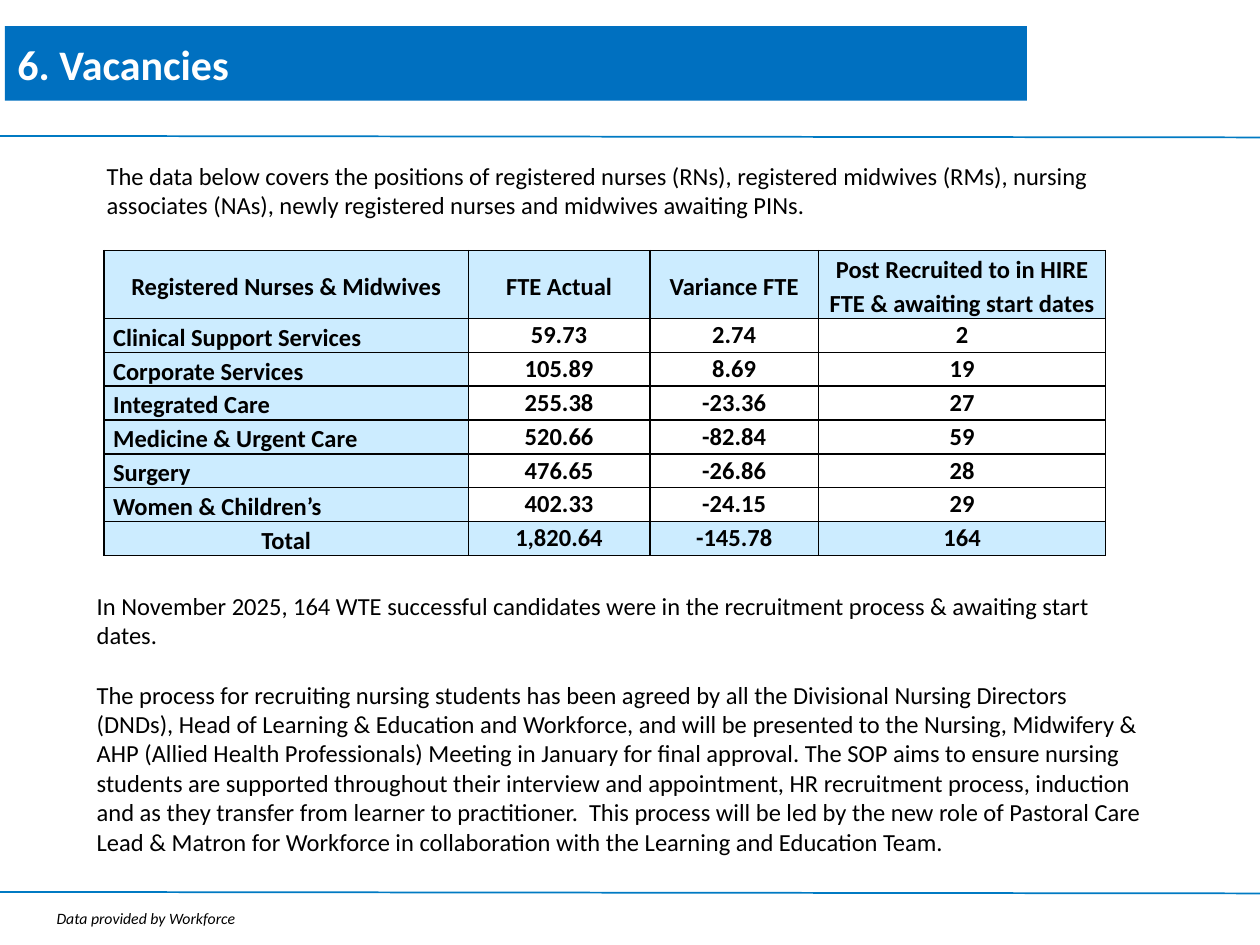
from typing import NamedTuple

from lxml import etree
from pptx import Presentation
from pptx.dml.color import RGBColor
from pptx.enum.shapes import MSO_CONNECTOR as Link, MSO_SHAPE as Form
from pptx.enum.text import MSO_ANCHOR as Anchor, PP_ALIGN as Align
from pptx.oxml.ns import qn
from pptx.util import Cm, Pt

BLACK, WHITE = "000000", "FFFFFF"
RULE, BANNER, PALE = "007AC3", "0070C0", "CCECFF"


class Note(NamedTuple):
    """A text box: place in cm, then its paragraphs and format."""
    left: float
    top: float
    width: float
    height: float
    lines: list
    size: int = 14
    italic: bool = False


class Row(NamedTuple):
    name: str
    actual: str
    variance: str
    posts: str


NOTES = [
    Note(1.9, 3.12, 22.25, 3.2, [
        "The data below covers the positions of registered nurses (RNs), "
        "registered midwives (RMs), nursing associates (NAs), newly registered "
        "nurses and midwives awaiting PINs."]),
    Note(0.89, 18.19, 6, 0.64, ["Data provided by Workforce"], 9, True),
    Note(1.7, 11.79, 21.59, 6.25, [
        "In November 2025, 164 WTE successful candidates were in the "
        "recruitment process & awaiting start dates.",
        "The process for recruiting nursing students has been agreed by all "
        "the Divisional Nursing Directors (DNDs), Head of Learning & Education "
        "and Workforce, and will be presented to the Nursing, Midwifery & AHP "
        "(Allied Health Professionals) Meeting in January for final approval. "
        "The SOP aims to ensure nursing students are supported throughout "
        "their interview and appointment, HR recruitment process, induction "
        "and as they transfer from learner to practitioner.  This process will "
        "be led by the new role of Pastoral Care Lead & Matron for Workforce "
        "in collaboration with the Learning and Education Team."]),
]

ROWS = [
    Row("Registered Nurses & Midwives", "FTE Actual", "Variance FTE",
        "Post Recruited to in HIRE FTE & awaiting start dates"),
    Row("Clinical Support Services", "59.73", "2.74", "2"),
    Row("Corporate Services", "105.89", "8.69", "19"),
    Row("Integrated Care", "255.38", "-23.36", "27"),
    Row("Medicine & Urgent Care", "520.66", "-82.84", "59"),
    Row("Surgery", "476.65", "-26.86", "28"),
    Row("Women & Children’s", "402.33", "-24.15", "29"),
    Row("Total", "1,820.64", "-145.78", "164"),
]
WIDTHS = [7.34, 3.66, 3.4, 5.79]
HEAD, BODY = 1.37, 0.66


def color(code: str) -> RGBColor:
    return RGBColor.from_string(code)


def write(frame, lines, *, size=14, bold=False, italic=False, ink=BLACK,
          align=Align.LEFT, gap=0, after=0, pitch=None) -> None:
    """Fill a text frame; gap is the space before each later paragraph."""
    frame.word_wrap = True
    for i, line in enumerate(lines):
        par = frame.add_paragraph() if i else frame.paragraphs[0]
        par.alignment = align
        if i:
            par.space_before = Pt(gap)
        par.space_after = Pt(after)
        if pitch:
            par.line_spacing = pitch
        run = par.add_run()
        run.text = line
        font = run.font
        font.name, font.size = "Calibri", Pt(size)
        font.bold, font.italic = bold, italic
        font.color.rgb = color(ink)


def add_rule(slide, top: float) -> None:
    line = slide.shapes.add_connector(
        Link.STRAIGHT, 0, Cm(top), Cm(25.4), Cm(top + 0.03))
    line.line.color.rgb = color(RULE)
    line.line.width = Pt(1)
    etree.SubElement(line._element.spPr, qn("a:effectLst"))


def add_title(slide, text: str) -> None:
    bar = slide.shapes.add_shape(
        Form.RECTANGLE, Cm(0.1), Cm(0.53), Cm(20.6), Cm(1.5))
    bar.shadow.inherit = False
    bar.fill.solid()
    bar.fill.fore_color.rgb = color(BANNER)
    bar.line.fill.background()
    bar.text_frame.vertical_anchor = Anchor.MIDDLE
    write(bar.text_frame, [text], size=24, bold=True, ink=WHITE)


def add_note(slide, note: Note) -> None:
    box = slide.shapes.add_textbox(*(Cm(n) for n in note[:4]))
    write(box.text_frame, note.lines, size=note.size, italic=note.italic, gap=17)


def add_edges(cell) -> None:
    """Draw a black 1 pt border; sides must come before the cell's fill."""
    props = cell._tc.get_or_add_tcPr()
    for i, side in enumerate(("a:lnL", "a:lnR", "a:lnT", "a:lnB")):
        edge = etree.Element(qn(side), w=str(Pt(1)))
        fill = etree.SubElement(edge, qn("a:solidFill"))
        etree.SubElement(fill, qn("a:srgbClr"), val=BLACK)
        props.insert(i, edge)


def add_grid(slide, rows: list[Row]) -> None:
    last = len(rows) - 1
    grid = slide.shapes.add_table(
        len(rows), len(WIDTHS), Cm(2.1), Cm(5.05),
        Cm(sum(WIDTHS)), Cm(HEAD + BODY * last)).table
    grid.first_row = grid.horz_banding = False
    for col, width in zip(grid.columns, WIDTHS):
        col.width = Cm(width)
    for r, row in enumerate(rows):
        grid.rows[r].height = Cm(BODY if r else HEAD)
        for c, text in enumerate(row):
            cell = grid.cell(r, c)
            label = r == 0 or c == 0
            cell.vertical_anchor = Anchor.MIDDLE
            cell.margin_left = cell.margin_right = Cm(0.18 if label else 0)
            cell.margin_top = cell.margin_bottom = 0
            if label or r == last:
                cell.fill.solid()
                cell.fill.fore_color.rgb = color(PALE)
            else:
                cell.fill.background()
            add_edges(cell)
            left = c == 0 and 0 < r < last
            write(cell.text_frame, [text], bold=True,
                  align=Align.LEFT if left else Align.CENTER,
                  after=10 if label else 0, pitch=1.15 if label else None)


def main() -> None:
    deck = Presentation()
    deck.slide_width, deck.slide_height = Cm(25.4), Cm(19.05)
    slide = deck.slides.add_slide(deck.slide_layouts[6])
    for top in (2.74, 17.98):
        add_rule(slide, top)
    add_title(slide, "6. Vacancies")
    for note in NOTES:
        add_note(slide, note)
    add_grid(slide, ROWS)
    deck.save("out.pptx")


if __name__ == "__main__":
    main()
